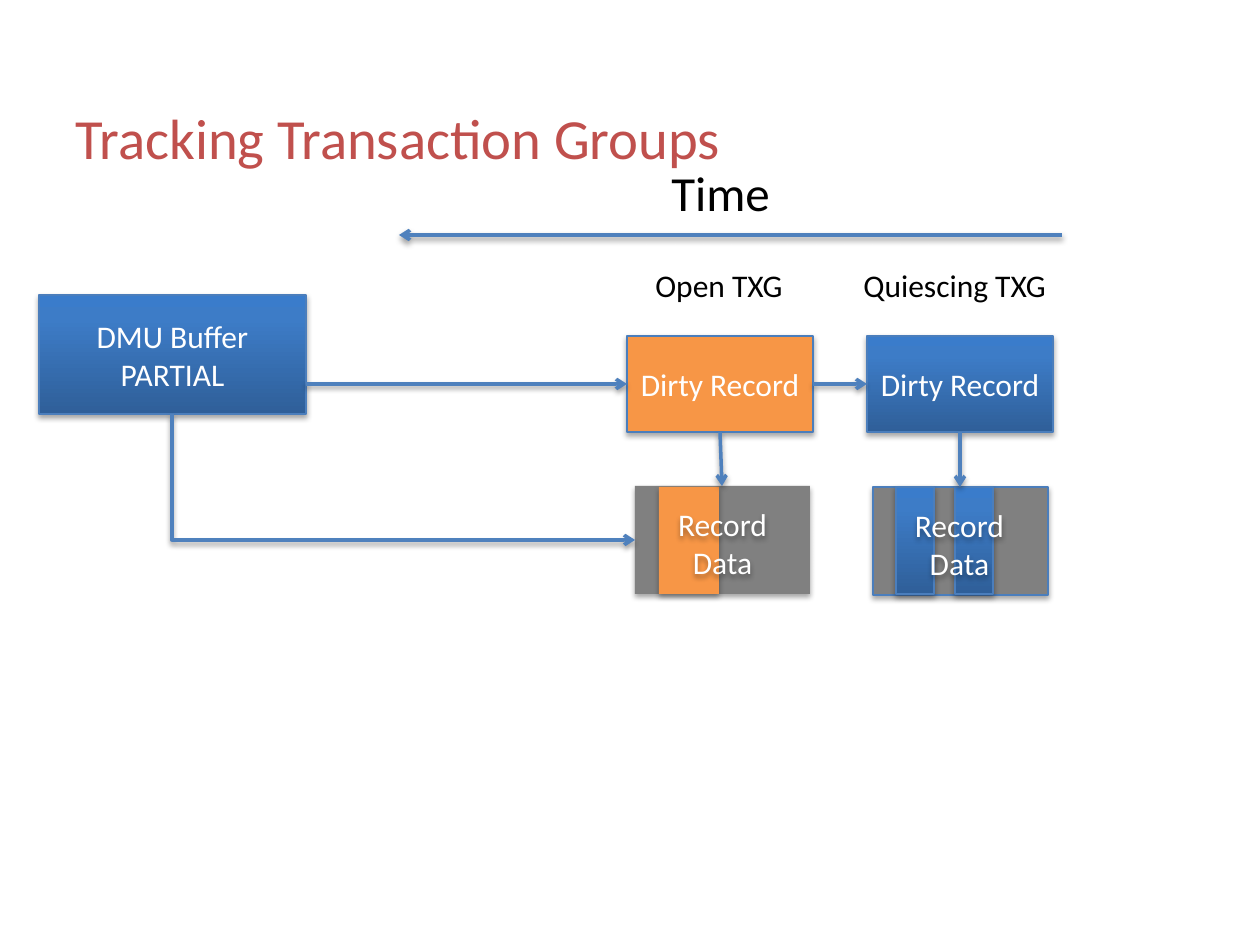
from copy import deepcopy
from dataclasses import dataclass
from typing import Optional

from lxml.etree import SubElement
from pptx import Presentation
from pptx.dml.color import RGBColor
from pptx.enum.shapes import MSO_CONNECTOR, MSO_SHAPE
from pptx.enum.text import MSO_ANCHOR, MSO_AUTO_SIZE, PP_ALIGN
from pptx.oxml.ns import qn
from pptx.util import Emu, Pt

PIXELS_PER_INCH = 126
FONT = "Calibri"
WHITE = RGBColor(0xFF, 0xFF, 0xFF)
BLACK = RGBColor(0x00, 0x00, 0x00)
GRAY = RGBColor(0x80, 0x80, 0x80)
ORANGE = RGBColor(0xF7, 0x96, 0x46)
RED = RGBColor(0xC0, 0x50, 0x4D)
OUTLINE = RGBColor(0x4B, 0x7E, 0xBC)
ARROW = RGBColor(0x4F, 0x81, 0xBD)
BLUE_GRADIENT = (
    (0, RGBColor(0x2F, 0x5F, 0x99)),
    (0.8, RGBColor(0x3D, 0x7C, 0xC7)),
    (1, RGBColor(0x3A, 0x7C, 0xCB)),
)


@dataclass(frozen=True)
class Box:
    left: int
    top: int
    width: int
    height: int
    fill: object = None
    outlined: bool = False
    lines: tuple = ()


@dataclass(frozen=True)
class Label:
    left: int
    top: int
    width: int
    height: int
    text: str
    size: float = 18
    alignment: Optional[PP_ALIGN] = None
    wrap: bool = False


@dataclass(frozen=True)
class Arrow:
    start: tuple
    end: tuple


RECORD_TEXT = ("Record Data",)
BOXES = (
    Box(635, 486, 175, 108, GRAY),
    Box(873, 487, 175, 108, GRAY, True),
    Box(659, 487, 60, 107, ORANGE),
    Box(955, 487, 38, 107, BLUE_GRADIENT, True),
    Box(896, 487, 38, 107, BLUE_GRADIENT, True),
    Box(872, 490, 175, 108, lines=RECORD_TEXT),
    Box(635, 489, 175, 108, lines=RECORD_TEXT),
    Box(39, 295, 267, 119, BLUE_GRADIENT, True, ("DMU Buffer", "PARTIAL")),
    Box(627, 336, 186, 96, ORANGE, True, ("Dirty Record",)),
    Box(867, 336, 186, 96, BLUE_GRADIENT, True, ("Dirty Record",)),
)
ARROWS = (
    Arrow((306, 384), (627, 384)),
    Arrow((813, 384), (867, 384)),
    Arrow((960, 432), (960, 487)),
    Arrow((720, 432), (722, 486)),
    Arrow((1062, 235), (399, 235)),
)
BUFFER_TO_DATA = Arrow((172, 414), (635, 540))
LABELS = (
    Label(643, 260, 155, 51, "Open TXG"),
    Label(851, 260, 210, 51, "Quiescing TXG"),
    Label(552, 156, 337, 72, "Time", 28, PP_ALIGN.CENTER, True),
)


def px(value: float) -> Emu:
    return Emu(round(value * 914400 / PIXELS_PER_INCH))


def apply_format(target, values: dict) -> None:
    for name, value in values.items():
        setattr(target, name, value)


def write_paragraph(paragraph, text: str, size: float, color: RGBColor,
                    alignment: Optional[PP_ALIGN]) -> None:
    paragraph.text = text
    paragraph.alignment = alignment
    font = paragraph.runs[0].font
    apply_format(font, {"name": FONT, "size": Pt(size)})
    font.color.rgb = color


def add_shadow(properties, distance: int, opacity: int) -> None:
    effects = properties.find(qn("a:effectLst"))
    if effects is None:
        effects = SubElement(properties, qn("a:effectLst"))
    shadow = SubElement(effects, qn("a:outerShdw"), blurRad="40000",
                        dist=str(distance), dir="5400000", rotWithShape="0")
    color = SubElement(shadow, qn("a:srgbClr"), val="000000")
    SubElement(color, qn("a:alpha"), val=str(opacity * 1000))


def fill_gradient(shape, stops: tuple) -> None:
    shape.fill.gradient()
    shape.fill.gradient_angle = 90
    stop_list = shape._element.spPr.find(".//" + qn("a:gsLst"))
    while len(stop_list) < len(stops):
        stop_list.append(deepcopy(stop_list[0]))
    for stop, (position, color) in zip(shape.fill.gradient_stops, stops):
        stop.position = position
        stop.color.rgb = color


def draw_box(slide, box: Box) -> None:
    shape = slide.shapes.add_shape(
        MSO_SHAPE.RECTANGLE, px(box.left), px(box.top), px(box.width), px(box.height))
    if box.fill is None:
        shape.fill.background()
    elif isinstance(box.fill, RGBColor):
        shape.fill.solid()
        shape.fill.fore_color.rgb = box.fill
    else:
        fill_gradient(shape, box.fill)
    if box.outlined:
        shape.line.color.rgb = OUTLINE
        shape.line.width = Pt(0.75)
    else:
        shape.line.fill.background()
    shape.shadow.inherit = False
    add_shadow(shape._element.spPr, 23000, 35)
    frame = shape.text_frame
    apply_format(frame, {"word_wrap": True, "vertical_anchor": MSO_ANCHOR.MIDDLE})
    for index, text in enumerate(box.lines):
        paragraph = frame.add_paragraph() if index else frame.paragraphs[0]
        write_paragraph(paragraph, text, 18, WHITE, PP_ALIGN.CENTER)


def style_arrow(connector) -> None:
    connector.line.color.rgb = ARROW
    connector.line.width = Pt(2)
    properties = connector._element.spPr
    SubElement(properties.find(qn("a:ln")), qn("a:tailEnd"), type="arrow")
    add_shadow(properties, 20000, 38)


def draw_arrow(slide, arrow: Arrow) -> None:
    points = map(px, (*arrow.start, *arrow.end))
    style_arrow(slide.shapes.add_connector(MSO_CONNECTOR.STRAIGHT, *points))


def draw_corner_arrow(slide, arrow: Arrow) -> None:
    (left, top), (right, bottom) = arrow.start, arrow.end
    center_x, center_y = (left + right) / 2, (top + bottom) / 2
    half_width, half_height = (bottom - top) / 2, (right - left) / 2
    connector = slide.shapes.add_connector(
        MSO_CONNECTOR.ELBOW,
        px(center_x + half_width), px(center_y - half_height),
        px(center_x - half_width), px(center_y + half_height))
    properties = connector._element.spPr
    properties.find(qn("a:xfrm")).set("rot", "16200000")
    properties.find(qn("a:prstGeom")).set("prst", "bentConnector2")
    style_arrow(connector)


def draw_label(slide, label: Label) -> None:
    shape = slide.shapes.add_textbox(
        px(label.left), px(label.top), px(label.width), px(label.height))
    apply_format(shape.text_frame, {
        "word_wrap": label.wrap, "auto_size": MSO_AUTO_SIZE.SHAPE_TO_FIT_TEXT})
    write_paragraph(shape.text_frame.paragraphs[0], label.text, label.size,
                    BLACK, label.alignment)


def draw_title(slide, text: str) -> None:
    title = slide.shapes.title
    apply_format(title, {"left": px(63), "top": px(95),
                         "width": px(1071), "height": px(84)})
    apply_format(title.text_frame, {
        "vertical_anchor": MSO_ANCHOR.MIDDLE, "auto_size": MSO_AUTO_SIZE.NONE})
    write_paragraph(title.text_frame.paragraphs[0], text, 32.4, RED, PP_ALIGN.LEFT)


def main() -> None:
    presentation = Presentation()
    apply_format(presentation, {"slide_width": px(1260), "slide_height": px(945)})
    slide = presentation.slides.add_slide(presentation.slide_layouts[5])
    draw_title(slide, "Tracking Transaction Groups")
    for box in BOXES:
        draw_box(slide, box)
    for arrow in ARROWS:
        draw_arrow(slide, arrow)
    draw_corner_arrow(slide, BUFFER_TO_DATA)
    for label in LABELS:
        draw_label(slide, label)
    presentation.save("out.pptx")


if __name__ == "__main__":
    main()
